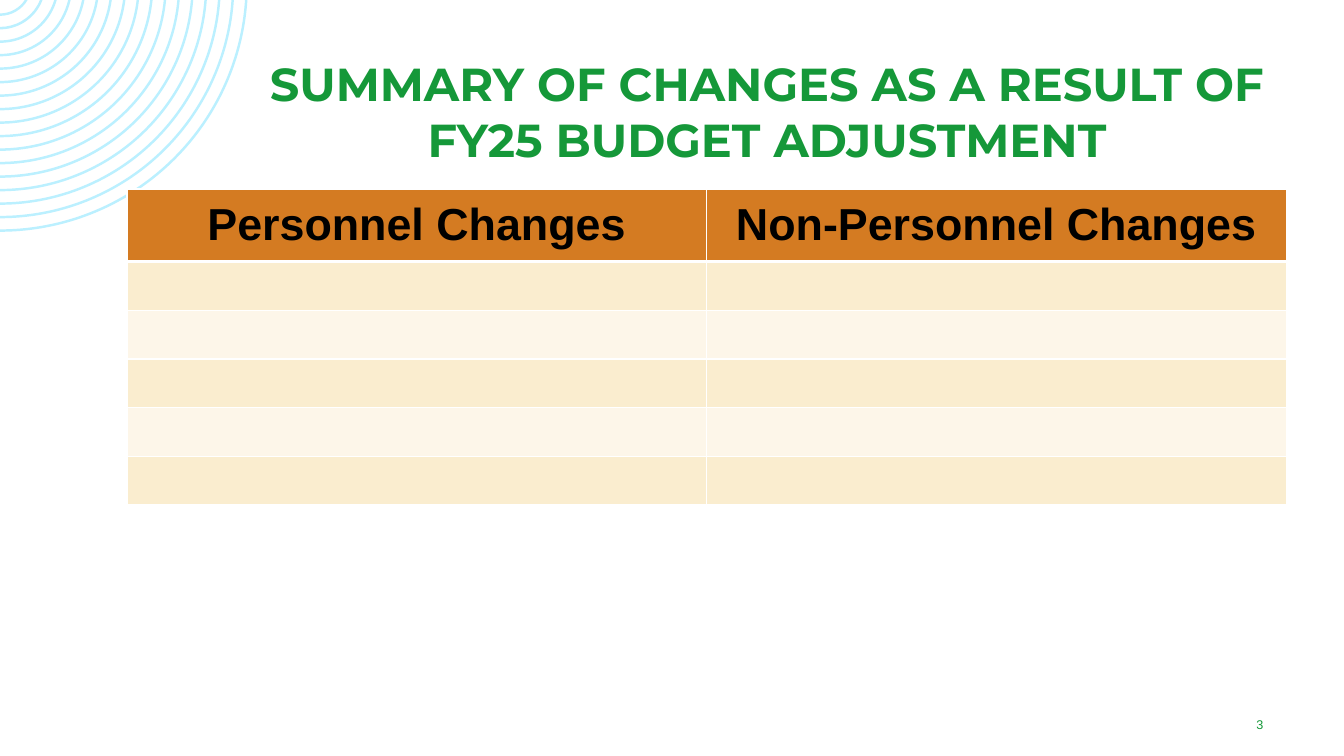
import math

from lxml import etree
from pptx import Presentation
from pptx.dml.color import RGBColor
from pptx.enum import text
from pptx.oxml import ns
from pptx.util import Pt

GREEN = "159839"
WHITE = "FFFFFF"
BANDS = ["FAEDCF", "FDF6E9"]


def paint(fill, color):
    fill.solid()
    fill.fore_color.rgb = RGBColor.from_string(color)


def write(frame, words, font, size, color, bold=False):
    frame.word_wrap = True
    para = frame.paragraphs[0]
    para.text = words
    para.alignment = text.PP_ALIGN.CENTER
    para.font.name = font
    para.font.size = Pt(size)
    para.font.bold = bold
    para.font.color.rgb = RGBColor.from_string(color)


def place(shape, left, top, width, height):
    shape.left, shape.top = Pt(left), Pt(top)
    shape.width, shape.height = Pt(width), Pt(height)


def ends(radius, drop):
    """Where a circle meets the slide's top and left edges."""
    return [(Pt(math.sqrt(radius ** 2 - drop ** 2)), 0),
            (0, Pt(radius - drop))]


def bend(line, radius, drop, back):
    """Turn a straight segment into an arc."""
    start = math.degrees(math.asin(drop / radius))
    first, sweep = (90, start - 90) if back else (start, 90 - start)
    arc = etree.Element(ns.qn("a:arcTo"), wR=str(Pt(radius)),
                        hR=str(Pt(radius)), stAng=str(round(first * 60000)),
                        swAng=str(round(sweep * 60000)))
    line.getparent().replace(line, arc)


def add_rings(slide, count=17, outer=177.1, gap=9.64, thick=1.75, drop=11.5):
    pen, radii = None, []
    for i in range(count):
        big = outer - gap * i
        small = big - thick
        radii.append((big, small))
        ring = ends(big, drop) + ends(small, drop)[::-1]
        if pen is None:
            pen = slide.shapes.build_freeform(*ring[0])
        else:
            pen.move_to(*ring[0])
        pen.add_line_segments(ring[1:], close=True)
    rings = pen.convert_to_shape()
    lines = list(rings._element.iter(ns.qn("a:lnTo")))
    for i, (big, small) in enumerate(radii):
        bend(lines[3 * i], big, drop, False)
        bend(lines[3 * i + 2], small, drop, True)
    rings.shadow.inherit = False
    paint(rings.fill, "BBF0FF")
    rings.line.fill.background()


def edge(cell, side, width):
    props = cell._tc.get_or_add_tcPr()
    line = etree.SubElement(props, ns.qn("a:ln" + side), w=str(Pt(width)))
    fill = etree.SubElement(line, ns.qn("a:solidFill"))
    etree.SubElement(fill, ns.qn("a:srgbClr"), val=WHITE)


def add_grid(slide, heads, rows):
    size = Pt(90.7), Pt(135), Pt(828), Pt(226)
    grid = slide.shapes.add_table(rows + 1, len(heads), *size).table
    for col in grid.columns:
        col.width = Pt(828 / len(heads))
    for r, row in enumerate(grid.rows):
        row.height = Pt(34.8 if r else 51.8)
        for c, cell in enumerate(row.cells):
            # Thick rule between the header and the body
            widths = {"L": 1, "R": 1, "T": 3 if r == 1 else 1,
                      "B": 1 if r else 3}
            for side, width in widths.items():
                edge(cell, side, width)
            paint(cell.fill, BANDS[(r - 1) % 2] if r else "D47B22")
            if r == 0:
                cell.vertical_anchor = text.MSO_ANCHOR.MIDDLE
                write(cell.text_frame, heads[c], "Arial", 32, "000000", True)


def main():
    deck = Presentation()
    deck.slide_width, deck.slide_height = Pt(960), Pt(540)
    slide = deck.slides.add_slide(deck.slide_layouts[5])

    # Corner rings
    add_rings(slide)

    # Title
    title = slide.shapes.title
    place(title, 177.1, 36, 741.6, 105.8)
    title.text_frame.vertical_anchor = text.MSO_ANCHOR.TOP
    title.text_frame.auto_size = text.MSO_AUTO_SIZE.NONE
    write(title.text_frame,
          "SUMMARY OF CHANGES AS A RESULT OF FY25 BUDGET ADJUSTMENT",
          "Montserrat", 33, GREEN, True)

    # Table of changes
    add_grid(slide, ["Personnel Changes", "Non-Personnel Changes"], 5)

    # Page number
    page = slide.shapes.add_textbox(Pt(861), Pt(507), Pt(78), Pt(21.6))
    page.text_frame.vertical_anchor = text.MSO_ANCHOR.MIDDLE
    write(page.text_frame, "3", "Arial", 9, GREEN)

    deck.save("out.pptx")


if __name__ == "__main__":
    main()
